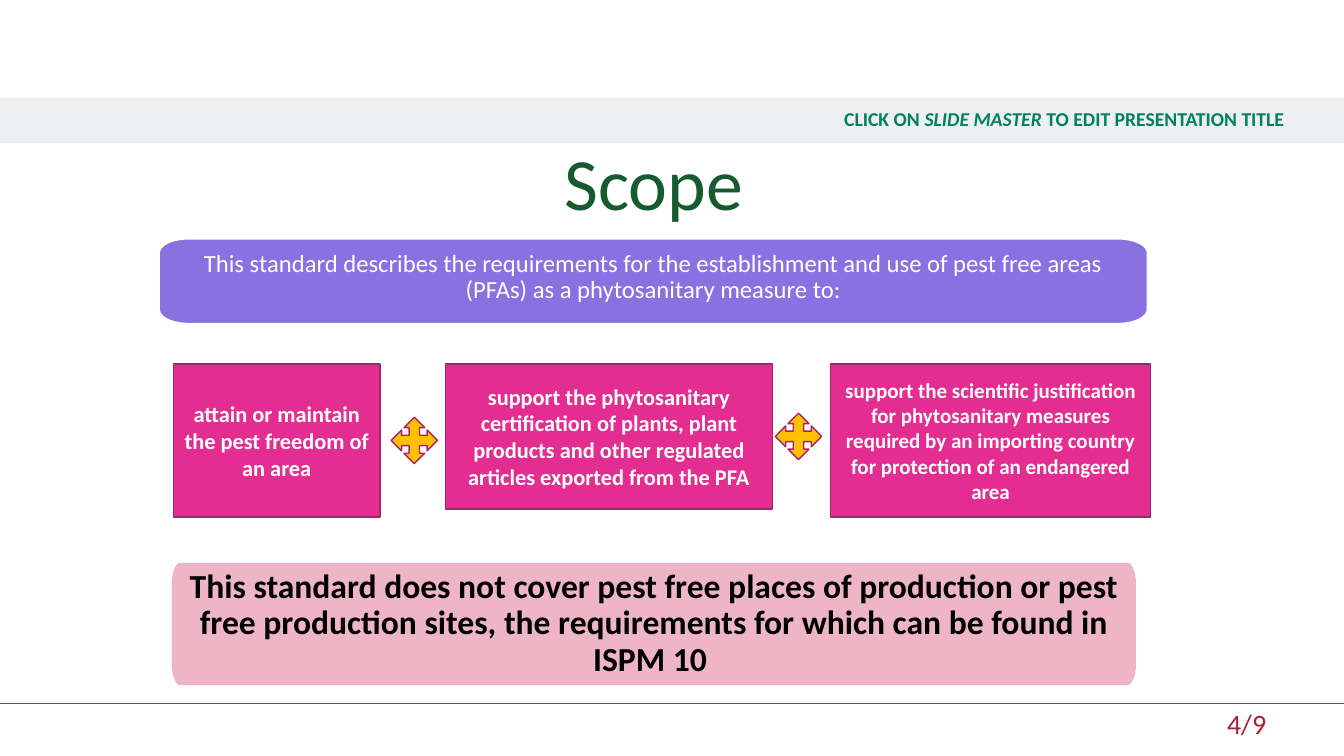
import math
from dataclasses import dataclass

from lxml import etree
from pptx import Presentation
from pptx.dml.color import RGBColor
from pptx.enum import shapes, text
from pptx.oxml.ns import qn
from pptx.util import Pt

PX = 9144  # EMU in one px, 100 px to the inch
FONT = "Calibri"
WHITE = RGBColor(0xFF, 0xFF, 0xFF)
BLACK = RGBColor(0x00, 0x00, 0x00)
GREEN = RGBColor(0x00, 0x82, 0x5F)
DARK_GREEN = RGBColor(0x16, 0x5A, 0x30)
GREY = RGBColor(0xD8, 0xD9, 0xDC)
CRIMSON = RGBColor(0xA8, 0x1E, 0x3B)
PURPLE = RGBColor(0x89, 0x71, 0xE1)
ROSE = RGBColor(0xEE, 0xB5, 0xC7)
PINK = RGBColor(0xE3, 0x2D, 0x91)
PLUM = RGBColor(0xA8, 0x21, 0x6B)
GOLD = RGBColor(0xFF, 0xC0, 0x00)


@dataclass(frozen=True)
class Rect:
    left: int
    top: int
    width: int
    height: int

    def emu(self) -> tuple[int, ...]:
        return tuple(n * PX for n in (self.left, self.top, self.width, self.height))


@dataclass(frozen=True)
class Banner:
    """A panel whose corners are quarter ellipses."""
    rect: Rect
    corner_x: int
    corner_y: int
    fill: RGBColor
    line: RGBColor
    words: str
    size: float
    color: RGBColor
    bold: bool
    inset: int
    anchor: text.MSO_ANCHOR


@dataclass(frozen=True)
class Aim:
    rect: Rect
    words: str
    size: int = 16


BANNERS = (
    Banner(Rect(158, 237, 980, 84), 29, 14, PURPLE, WHITE,
           "This standard describes the requirements for the establishment and use "
           "of pest free areas (PFAs) as a phytosanitary measure to:",
           17.6, WHITE, False, 12, text.MSO_ANCHOR.TOP),
    Banner(Rect(171, 559, 955, 120), 8, 20, ROSE, ROSE,
           "This standard does not cover pest free places of production or pest free "
           "production sites, the requirements for which can be found in ISPM 10 ",
           24, BLACK, True, 7, text.MSO_ANCHOR.MIDDLE),
)
AIMS = (
    Aim(Rect(172, 361, 205, 152), "attain or maintain the pest freedom of an area"),
    Aim(Rect(442, 361, 324, 144),
        "support the phytosanitary certification of plants, plant products and "
        "other regulated articles exported from the PFA"),
    Aim(Rect(824, 361, 317, 152),
        "support the scientific justification for phytosanitary measures required by "
        "an importing country for protection of an endangered area", 15),
)
ARROWS = (Rect(388, 414, 46, 46), Rect(769, 410, 46, 46))


def write(shape, *spans: str, size: float, color: RGBColor, bold: bool = False,
          italic_span: int = -1, align=text.PP_ALIGN.CENTER,
          anchor=text.MSO_ANCHOR.MIDDLE, spacing: float = 1.0,
          insets: tuple[int, ...] = (10, 5, 10, 5)) -> None:
    """Fill the shape with one paragraph; insets are left, top, right, bottom."""
    frame = shape.text_frame
    frame.word_wrap = True
    frame.auto_size = text.MSO_AUTO_SIZE.NONE
    frame.vertical_anchor = anchor
    (frame.margin_left, frame.margin_top,
     frame.margin_right, frame.margin_bottom) = (n * PX for n in insets)
    para = frame.paragraphs[0]
    para.alignment = align
    para.line_spacing = spacing
    for index, words in enumerate(spans):
        span = para.add_run()
        span.text = words
        font = span.font
        font.name, font.size, font.bold = FONT, Pt(size), bold
        font.italic = index == italic_span
        font.color.rgb = color


def paint(shape, fill: RGBColor, line: RGBColor | None = None) -> None:
    shape.shadow.inherit = False
    shape.fill.solid()
    shape.fill.fore_color.rgb = fill
    if line is None:
        shape.line.fill.background()
    else:
        shape.line.color.rgb = line
        shape.line.width = Pt(1)


def add_preset(page, kind, rect: Rect, fill: RGBColor, line: RGBColor | None = None):
    shape = page.shapes.add_shape(kind, *rect.emu())
    paint(shape, fill, line)
    return shape


def banner_outline(banner: Banner, steps: int = 12) -> list[tuple[int, int]]:
    """Points clockwise from the left end of the top left corner."""
    rect = banner.rect
    near_x, far_x = rect.left + banner.corner_x, rect.left + rect.width - banner.corner_x
    near_y, far_y = rect.top + banner.corner_y, rect.top + rect.height - banner.corner_y
    centres = ((near_x, near_y), (far_x, near_y), (far_x, far_y), (near_x, far_y))
    points = []
    for corner, (x, y) in enumerate(centres):
        for step in range(steps + 1):
            angle = math.pi + (corner + step / steps) * math.pi / 2
            points.append((round((x + banner.corner_x * math.cos(angle)) * PX),
                           round((y + banner.corner_y * math.sin(angle)) * PX)))
    return points


def add_banner(page, banner: Banner) -> None:
    start, *rest = banner_outline(banner)
    builder = page.shapes.build_freeform(*start)
    builder.add_line_segments(rest, close=True)
    shape = builder.convert_to_shape()
    paint(shape, banner.fill, banner.line)
    write(shape, banner.words, size=banner.size, color=banner.color, bold=banner.bold,
          anchor=banner.anchor, spacing=0.9, insets=(banner.inset,) * 4)


def add_header(page) -> None:
    band = add_preset(page, shapes.MSO_SHAPE.RECTANGLE, Rect(0, 97, 1333, 45), GREY)
    tint = band.fill._xPr.find(qn("a:solidFill"))[0]
    etree.SubElement(tint, qn("a:alpha"), val="42000")
    write(band, "CLICK ON ", "SLIDE MASTER ", "TO EDIT PRESENTATION TITLE",
          size=14, color=GREEN, bold=True, italic_span=1,
          align=text.PP_ALIGN.RIGHT, spacing=0.9, insets=(59, 5, 59, 5))


def add_footer(page) -> None:
    rule = page.shapes.add_connector(
        shapes.MSO_CONNECTOR.STRAIGHT, 0, 698 * PX, 1333 * PX, 698 * PX)
    rule.line.color.rgb = GREEN
    rule.line.width = Pt(1)
    etree.SubElement(rule._element.spPr, qn("a:effectLst"))
    number = page.shapes.add_textbox(*Rect(1158, 701, 175, 39).emu())
    write(number, "4/9", size=20, color=CRIMSON, align=text.PP_ALIGN.LEFT,
          anchor=text.MSO_ANCHOR.TOP, insets=(59, 0, 39, 5))


def main() -> None:
    deck = Presentation()
    deck.slide_width, deck.slide_height = 1333 * PX, 750 * PX
    page = deck.slides.add_slide(deck.slide_layouts[5])

    add_footer(page)
    add_header(page)
    title = page.shapes.title
    title.left, title.top, title.width, title.height = Rect(234, 108, 829, 122).emu()
    write(title, "Scope", size=52.6, color=DARK_GREEN,
          anchor=text.MSO_ANCHOR.BOTTOM, spacing=0.9)

    for banner in BANNERS:
        add_banner(page, banner)
    for aim in AIMS:
        box = add_preset(page, shapes.MSO_SHAPE.RECTANGLE, aim.rect, PINK, PLUM)
        write(box, aim.words, size=aim.size, color=WHITE, bold=True)
    for rect in ARROWS:
        add_preset(page, shapes.MSO_SHAPE.QUAD_ARROW, rect, GOLD, PLUM)

    deck.save("out.pptx")


if __name__ == "__main__":
    main()
